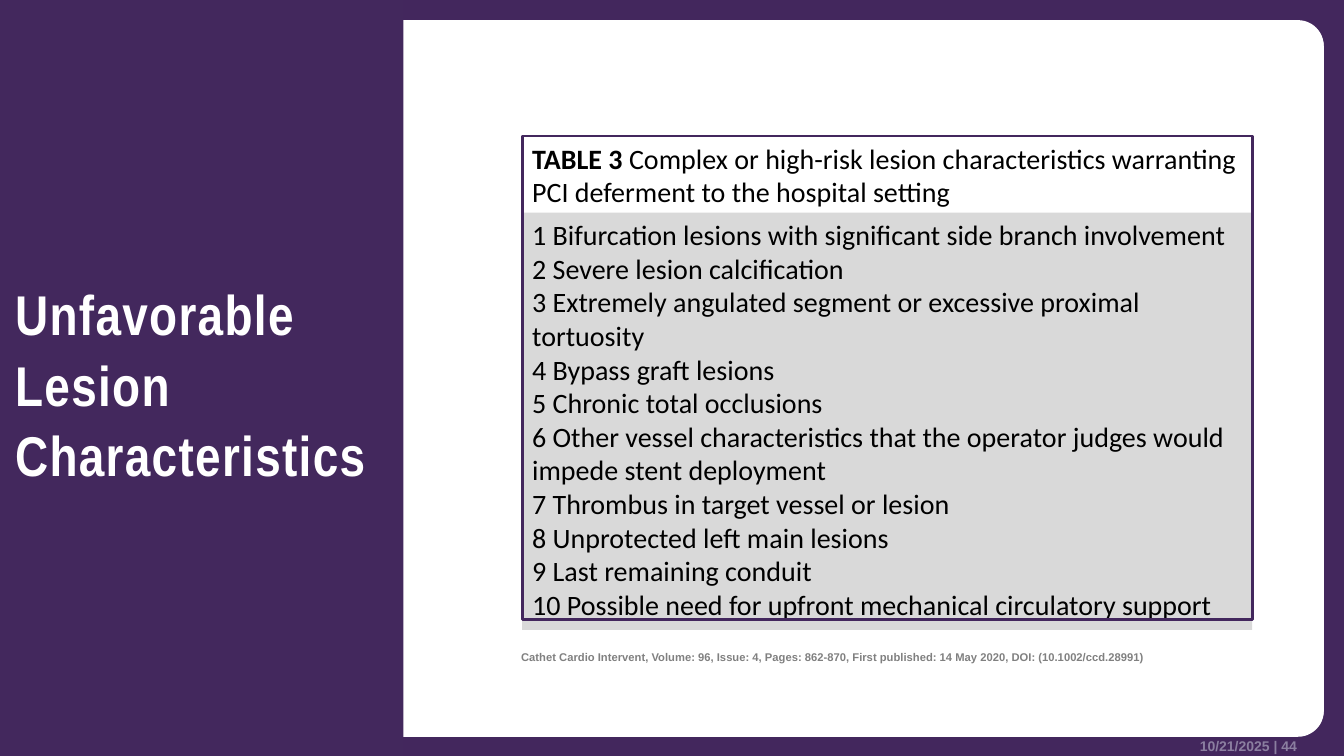
"""Build the slide on unfavorable lesion characteristics."""
from dataclasses import dataclass
from typing import Optional

from pptx import Presentation
from pptx.dml.color import RGBColor
from pptx.enum.shapes import MSO_SHAPE
from pptx.enum.text import MSO_ANCHOR, PP_ALIGN
from pptx.util import Inches, Pt

RECTANGLE, ROUNDED = MSO_SHAPE.RECTANGLE, MSO_SHAPE.ROUNDED_RECTANGLE
TOP, MIDDLE, BOTTOM = MSO_ANCHOR.TOP, MSO_ANCHOR.MIDDLE, MSO_ANCHOR.BOTTOM
LEFT, RIGHT = PP_ALIGN.LEFT, PP_ALIGN.RIGHT

COLORS = {
    "backdrop": "43275D",
    "arrow": "43285D",
    "white": "FFFFFF",
    "list": "D9D9D9",
    "black": "000000",
    "citation": "808080",
    "footer": "8B7FA0",
}
LESIONS = [
    "1 Bifurcation lesions with significant side branch involvement",
    "2 Severe lesion calcification",
    "3 Extremely angulated segment or excessive proximal tortuosity",
    "4 Bypass graft lesions",
    "5 Chronic total occlusions",
    "6 Other vessel characteristics that the operator judges would",
    "impede stent deployment",
    "7 Thrombus in target vessel or lesion",
    "8 Unprotected left main lesions",
    "9 Last remaining conduit",
    "10 Possible need for upfront mechanical circulatory support",
]
TABLE_LEFT, TABLE_WIDTH = 5.18, 7.24


@dataclass(frozen=True)
class Area:
    """A place on the slide, in inches."""
    left: float
    top: float
    width: float
    height: float

    def lengths(self) -> list:
        """Return the four values as lengths."""
        return [Inches(v) for v in (self.left, self.top, self.width, self.height)]


@dataclass(frozen=True)
class Panel:
    """A preset shape with its fill and outline."""
    area: Area
    kind: int = RECTANGLE
    fill: Optional[str] = None
    line: Optional[str] = None
    corner: Optional[float] = None


CARDS = [Panel(Area(0.2, top, 12.93, 7.1), ROUNDED, "white", corner=0.036)
         for top in (0.21, 0.2)]
LESION_LIST = Panel(Area(TABLE_LEFT, 2.11, TABLE_WIDTH, 4.14), fill="list")
TABLE_FRAME = Panel(Area(TABLE_LEFT, 1.35, TABLE_WIDTH, 4.8), line="backdrop")


def rgb(name: str) -> RGBColor:
    """Look up a colour by its name."""
    return RGBColor.from_string(COLORS[name])


def draw_panel(slide, panel: Panel):
    """Draw one panel and return it."""
    shape = slide.shapes.add_shape(panel.kind, *panel.area.lengths())
    shape.shadow.inherit = False
    if panel.corner is not None:
        shape.adjustments[0] = panel.corner
    if panel.fill:
        shape.fill.solid()
        shape.fill.fore_color.rgb = rgb(panel.fill)
    else:
        shape.fill.background()
    if panel.line:
        shape.line.color.rgb = rgb(panel.line)
        shape.line.width = Pt(2)
    else:
        shape.line.fill.background()
    return shape


def draw_arrow(slide) -> None:
    """Draw the pointed block behind the title."""
    builder = slide.shapes.build_freeform(0, 0, scale=Inches(1))
    builder.add_line_segments([(3.57, 0), (4.47, 3.75), (3.57, 7.5), (0, 7.5)])
    arrow = builder.convert_to_shape()
    arrow.shadow.inherit = False
    arrow.fill.solid()
    arrow.fill.fore_color.rgb = rgb("arrow")
    arrow.line.fill.background()


def write(shape, paragraphs: list, *, size: float, color: str, font: str = "Arial",
          bold: bool = True, lead: str = "", align=LEFT, anchor=TOP,
          insets: tuple = (0.1, 0.05, 0.1, 0.05), tracking: int = 0,
          line_spacing: float = 1.0) -> None:
    """Write paragraphs, with an optional bold lead before the first."""
    frame = shape.text_frame
    frame.word_wrap = True
    frame.vertical_anchor = anchor
    (frame.margin_left, frame.margin_top,
     frame.margin_right, frame.margin_bottom) = map(Inches, insets)
    for index, text in enumerate(paragraphs):
        paragraph = frame.add_paragraph() if index else frame.paragraphs[0]
        paragraph.alignment = align
        paragraph.line_spacing = line_spacing
        parts = [(text, bold)]
        if lead and not index:
            parts.insert(0, (lead, True))
        for words, weight in parts:
            run = paragraph.add_run()
            run.text = words
            run.font.size = Pt(size)
            run.font.name = font
            run.font.bold = weight
            run.font.color.rgb = rgb(color)
            if tracking:
                run.font._element.set("spc", str(tracking))


def write_box(slide, area: Area, text: str, **style) -> None:
    """Add a text box holding one paragraph."""
    write(slide.shapes.add_textbox(*area.lengths()), [text], **style)


def main() -> None:
    """Build and save the slide."""
    deck = Presentation()
    deck.slide_width, deck.slide_height = Inches(13.33), Inches(7.5)
    slide = deck.slides.add_slide(deck.slide_layouts[5])
    slide.background.fill.solid()
    slide.background.fill.fore_color.rgb = rgb("backdrop")

    for card in CARDS:
        draw_panel(slide, card)
    draw_arrow(slide)
    write_box(slide, Area(8.19, 7.31, 4.71, 0.17), "10/21/2025 | 44 ", size=10,
              color="footer", align=RIGHT, anchor=BOTTOM, insets=(0, 0, 0, 0))

    title = slide.shapes.title
    title.left, title.top, title.width, title.height = Area(-0.15, 0.85, 4.58, 5.93).lengths()
    title._element.getparent().append(title._element)
    write(title, ["Unfavorable Lesion Characteristics"], size=40, color="white",
          font="Arial Narrow", anchor=MIDDLE, insets=(0.3, 0, 0.2, 0.05),
          tracking=100, line_spacing=1.05)

    write_box(slide, Area(5.07, 6.4, 6.49, 0.36),
              "Cathet Cardio Intervent, Volume: 96, Issue: 4, Pages: 862-870, "
              "First published: 14 May 2020, DOI: (10.1002/ccd.28991)",
              size=8, color="citation")
    write(draw_panel(slide, LESION_LIST), LESIONS, size=20, color="black",
          font="Calibri", bold=False)
    write_box(slide, Area(TABLE_LEFT, 1.35, TABLE_WIDTH, 0.76),
              "Complex or high-risk lesion characteristics warranting "
              "PCI deferment to the hospital setting",
              lead="TABLE 3 ", size=20, color="black", font="Calibri", bold=False)
    draw_panel(slide, TABLE_FRAME)
    deck.save("out.pptx")


if __name__ == "__main__":
    main()
